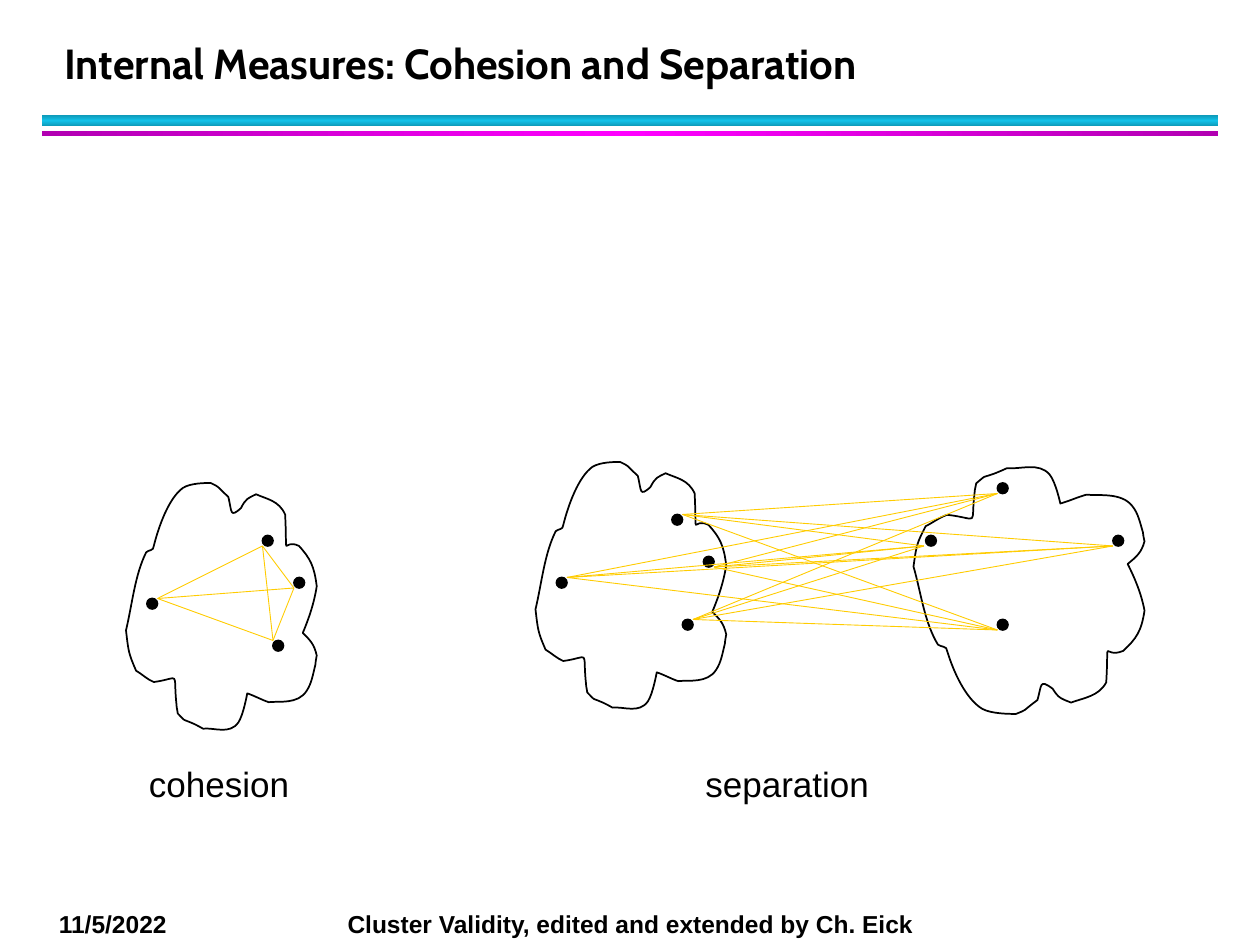
from copy import deepcopy
from itertools import combinations, product

from lxml.etree import SubElement
from pptx import Presentation
from pptx.dml.color import RGBColor
from pptx.enum.shapes import MSO_CONNECTOR, MSO_SHAPE
from pptx.enum.text import MSO_ANCHOR, MSO_AUTO_SIZE, PP_ALIGN
from pptx.oxml.ns import qn
from pptx.util import Pt

COLORS = {
    "ink": "000000",
    "distance": "FFCC00",
    "cyan_edge": "0E9BBA",
    "cyan_middle": "12C2E9",
    "magenta_edge": "B200B2",
    "magenta_middle": "FF00FF",
}

# Cluster outline on a grid of 151 by 200: a start, then Bezier segments
# given as two control points and an end point.
GRID_WIDTH, GRID_HEIGHT = 151, 200
OUTLINE_START = (16, 55)
OUTLINE_CURVES = [
    ((7, 73), (5, 96), (0, 117)),
    ((2, 134), (2, 135), (8, 149)),
    ((13, 152), (17, 156), (22, 158)),
    ((44, 155), (37, 148), (40, 176)),
    ((40, 179), (41, 181), (41, 183)),
    ((48, 190), (44, 187), (51, 190)),
    ((54, 191), (61, 195), (61, 195)),
    ((70, 194), (82, 200), (89, 190)),
    ((93, 184), (96, 167), (96, 167)),
    ((102, 169), (107, 172), (113, 174)),
    ((121, 173), (136, 176), (143, 165)),
    ((147, 159), (148, 152), (150, 144)),
    ((150, 142), (151, 137), (151, 137)),
    ((149, 128), (146, 125), (140, 119)),
    ((145, 107), (149, 95), (151, 82)),
    ((149, 66), (146, 60), (137, 50)),
    ((123, 43), (128, 65), (126, 25)),
    ((121, 14), (112, 13), (103, 9)),
    ((97, 12), (95, 12), (91, 20)),
    ((82, 28), (84, 23), (81, 11)),
    ((70, 1), (75, 4), (67, 0)),
    ((63, 0), (51, 0), (45, 4)),
    ((34, 12), (26, 34), (22, 50)),
    ((22, 54), (18, 53), (16, 55)),
]

DOT_SIZE = 6
COHESION_DOTS = [(156, 366), (150, 306), (84, 342), (168, 330)]
COHESION_ENDS = [(90, 342), (150, 312), (156, 366), (168, 336)]
LEFT_OFFSET = (234, -12)  # from the cohesion cluster to its twin
LEFT_ENDS = [(396, 354), (408, 324), (324, 330), (390, 294)]
RIGHT_DOTS = [(636, 306), (529, 306), (570, 354), (570, 276)]
RIGHT_ENDS = [(570, 360), (528, 312), (570, 282), (636, 312)]


def color(name):
    return RGBColor.from_string(COLORS[name])


def add_run(paragraph, text, size, font_name="Arial", bold=False):
    run = paragraph.add_run()
    run.text = text
    run.font.size = Pt(size)
    run.font.name = font_name
    run.font.bold = bold
    run.font.color.rgb = color("ink")


def set_title(slide, text):
    title = slide.shapes.title
    title.left, title.top, title.width, title.height = Pt(29.5), Pt(12), Pt(652), Pt(42)
    title.text_frame.vertical_anchor = MSO_ANCHOR.BOTTOM
    paragraph = title.text_frame.paragraphs[0]
    paragraph.alignment = PP_ALIGN.LEFT
    paragraph.line_spacing = Pt(36)
    add_run(paragraph, text, 24, "Cabin", bold=True)


def add_gradient_bar(slide, top, height, hue, angle):
    """Add a bar that is brightest halfway between its two edges."""
    bar = slide.shapes.add_shape(MSO_SHAPE.RECTANGLE, Pt(24), Pt(top), Pt(672), Pt(height))
    bar.shadow.inherit = False
    bar.line.fill.background()
    bar.fill.gradient()
    bar.fill.gradient_angle = angle
    first_stop = bar._element.spPr.find(".//" + qn("a:gs"))
    first_stop.addnext(deepcopy(first_stop))
    stops = zip(bar.fill.gradient_stops, (0, 0.5, 1), ("edge", "middle", "edge"))
    for stop, position, tone in stops:
        stop.position = position
        stop.color.rgb = color(f"{hue}_{tone}")


def curve_segments(shape):
    """Turn each three line segments of a freeform into one Bezier segment."""
    lines = list(shape._element.spPr.iter(qn("a:lnTo")))
    for index in range(0, len(lines), 3):
        first, *others = lines[index:index + 3]
        curve = first.makeelement(qn("a:cubicBezTo"))
        first.addprevious(curve)
        for line in (first, *others):
            curve.append(line[0])
            line.getparent().remove(line)


def add_cluster(slide, left, top, width, height, upside_down=False):
    def place(point):
        x, y = point
        if upside_down:
            y = GRID_HEIGHT - y
        return Pt(left + x * width / GRID_WIDTH), Pt(top + y * height / GRID_HEIGHT)

    builder = slide.shapes.build_freeform(*place(OUTLINE_START))
    points = [place(point) for curve in OUTLINE_CURVES for point in curve]
    builder.add_line_segments(points, close=True)
    cluster = builder.convert_to_shape()
    curve_segments(cluster)
    cluster.shadow.inherit = False
    cluster.fill.background()
    cluster.line.color.rgb = color("ink")
    cluster.line.width = Pt(1)


def add_dots(slide, corners):
    for left, top in corners:
        dot = slide.shapes.add_shape(
            MSO_SHAPE.OVAL, Pt(left), Pt(top), Pt(DOT_SIZE), Pt(DOT_SIZE))
        dot.shadow.inherit = False
        dot.fill.solid()
        dot.fill.fore_color.rgb = color("ink")
        dot.line.color.rgb = color("ink")
        dot.line.width = Pt(1)


def add_distances(slide, pairs):
    for start, end in pairs:
        line = slide.shapes.add_connector(
            MSO_CONNECTOR.STRAIGHT, *map(Pt, start), *map(Pt, end))
        line.line.color.rgb = color("distance")
        line.line.width = Pt(0.5)
        SubElement(line._element.spPr, qn("a:effectLst"))


def add_label(slide, text, left, width):
    label = slide.shapes.add_textbox(Pt(left), Pt(432), Pt(width), Pt(31))
    label.text_frame.word_wrap = False
    label.text_frame.auto_size = MSO_AUTO_SIZE.SHAPE_TO_FIT_TEXT
    add_run(label.text_frame.paragraphs[0], text, 20)


def add_footer(slide, date, credit):
    footer = slide.shapes.add_textbox(Pt(26.5), Pt(516), Pt(672), Pt(24))
    footer.text_frame.word_wrap = True
    paragraph = footer.text_frame.paragraphs[0]
    tab_list = SubElement(paragraph._p.get_or_add_pPr(), qn("a:tabLst"))
    SubElement(tab_list, qn("a:tab"), pos=str(Pt(165)), algn="l")
    add_run(paragraph, f"{date}\t{credit}", 14, bold=True)


def main():
    presentation = Presentation()
    presentation.slide_width, presentation.slide_height = Pt(720), Pt(540)
    slide = presentation.slides.add_slide(presentation.slide_layouts[5])

    add_gradient_bar(slide, 66, 6, "cyan", 90)
    add_gradient_bar(slide, 75, 3, "magenta", 0)
    add_footer(slide, "11/5/2022", "Cluster Validity, edited and extended by Ch. Eick")
    set_title(slide, "Internal Measures: Cohesion and Separation")

    shift_x, shift_y = LEFT_OFFSET
    add_cluster(slide, 72 + shift_x, 276 + shift_y, 109, 144)
    add_dots(slide, [(x + shift_x, y + shift_y) for x, y in COHESION_DOTS])
    add_cluster(slide, 522, 264, 132, 144, upside_down=True)
    add_dots(slide, RIGHT_DOTS)
    add_distances(slide, product(LEFT_ENDS, RIGHT_ENDS))

    add_cluster(slide, 72, 276, 109, 144)
    add_dots(slide, COHESION_DOTS)
    add_distances(slide, combinations(COHESION_ENDS, 2))

    add_label(slide, "cohesion", 78, 96)
    add_label(slide, "separation", 396, 108)
    presentation.save("out.pptx")


if __name__ == "__main__":
    main()
